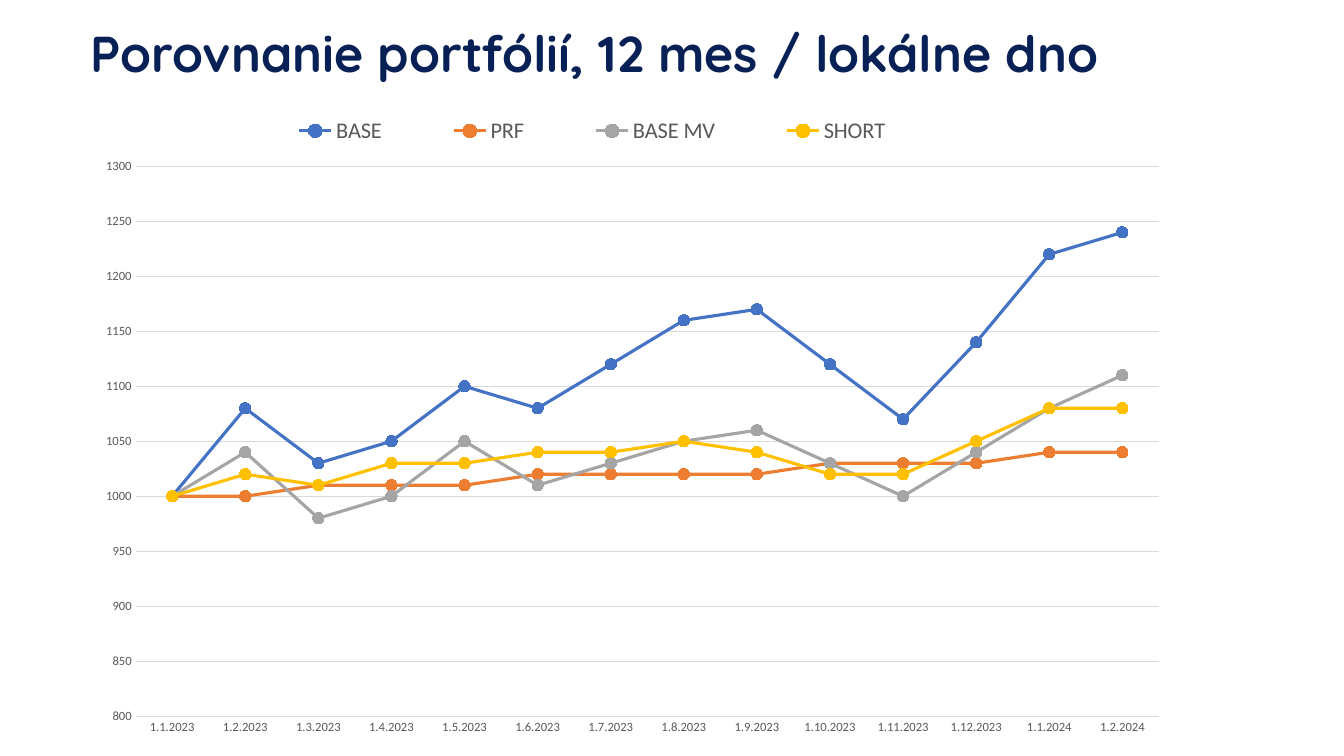
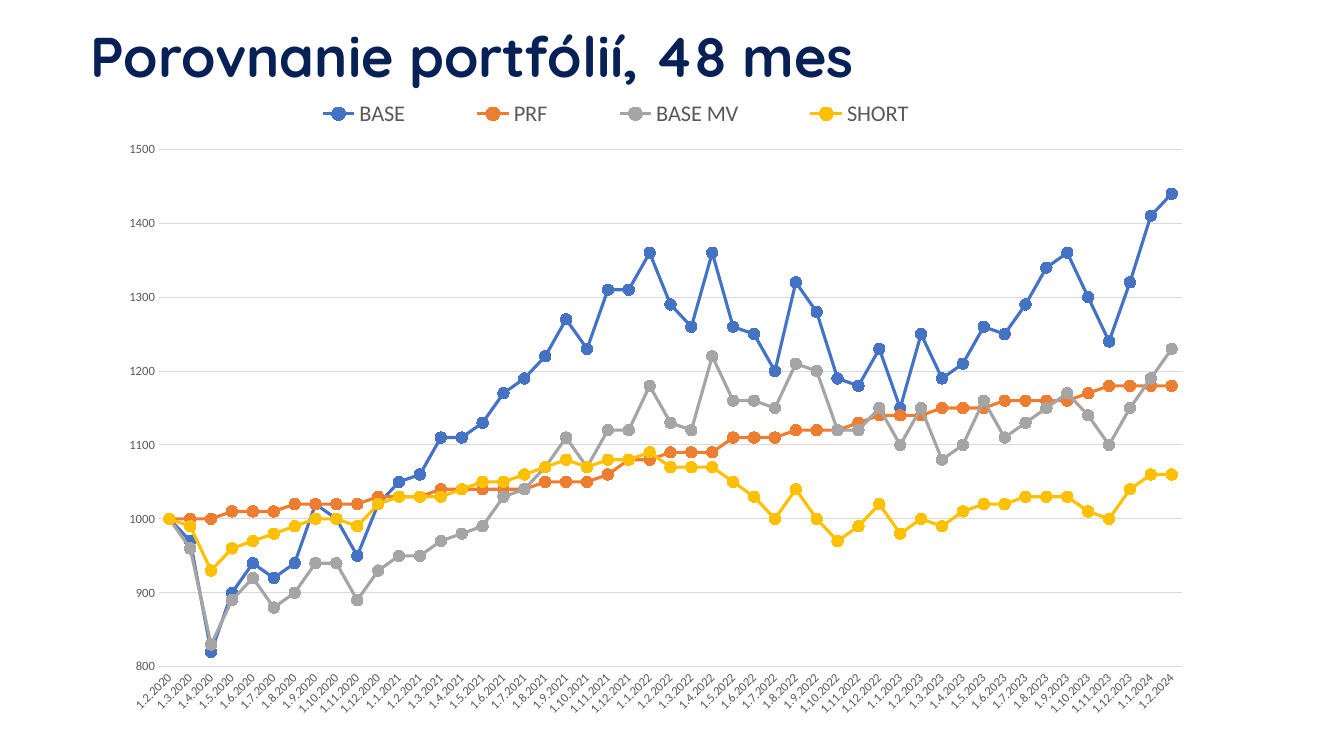
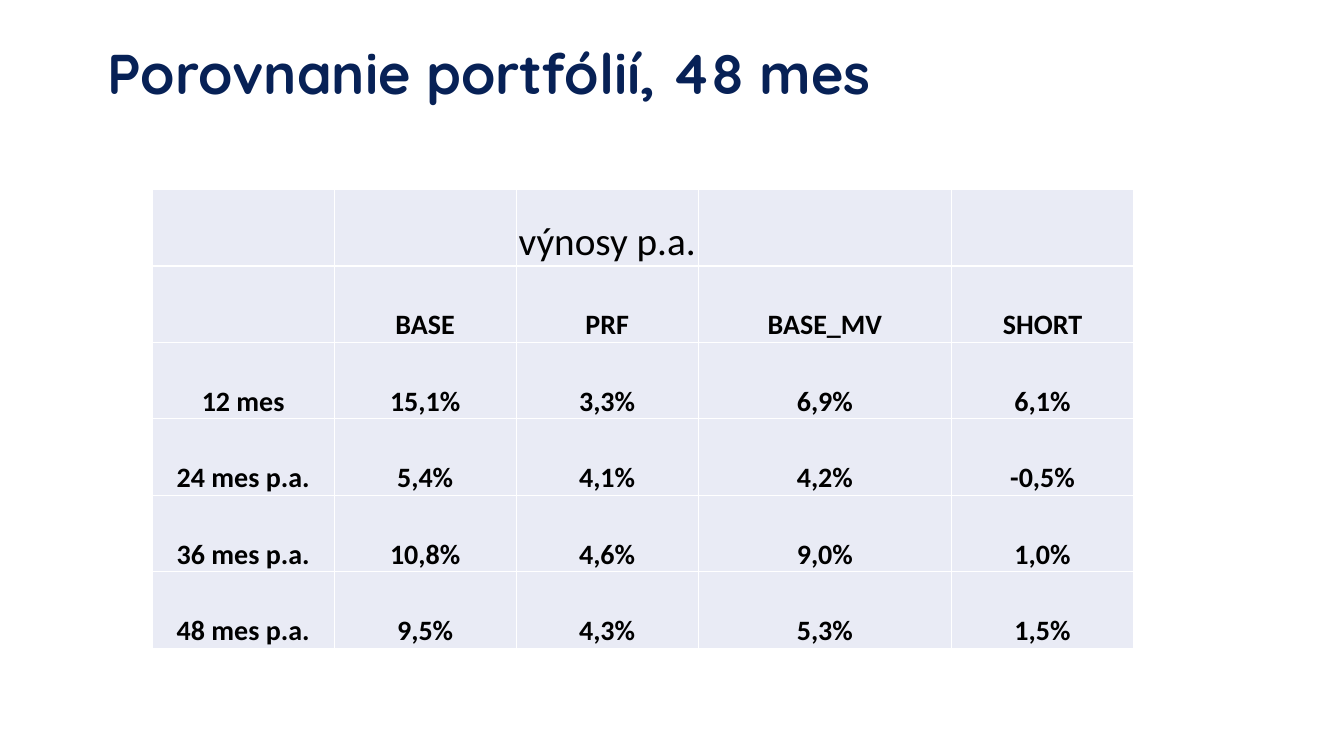
import dataclasses
import typing

import pptx
import pptx.chart.data
import pptx.dml.color
import pptx.enum.chart
import pptx.enum.text
import pptx.oxml
import pptx.oxml.ns
import pptx.util

Pt = pptx.util.Pt
NAVY, BLACK, GREY, RULE, PALE = "072156", "000000", "595959", "D9D9D9", "E9EBF5"
SERIES_COLOURS = {"BASE": "4472C4", "PRF": "ED7D31", "BASE MV": "A5A5A5", "SHORT": "FFC000"}
CELL_FORMAT = {
    "vertical_anchor": pptx.enum.text.MSO_ANCHOR.BOTTOM,
    "margin_bottom": Pt(0),
    **{f"margin_{side}": Pt(0.7) for side in ("left", "right", "top")},
}
NARROW, WIDE, ROW_HEIGHT = 130, 181, 54.6
TITLE_48 = "Porovnanie portfólií, 48 mes"


class Frame(typing.NamedTuple):
    x: float
    y: float
    w: float
    h: float


@dataclasses.dataclass(frozen=True)
class Comparison:
    title: str
    title_size: float
    left: float
    top: float
    plot_height: float
    slanted: bool
    tens: dict[str, list[int]]


def climb(months_per_level: list[int]) -> list[int]:
    return [100 + rise for rise, months in enumerate(months_per_level) for _ in range(months)]


LEGEND = Frame(0.14, 0.01, 0.65, 0.07)
COMPARISONS = [
    Comparison(
        "Porovnanie portfólií, 12 mes / lokálne dno", 36, 57.6, 72.7, 0.85, False,
        {
            "BASE": [100, 108, 103, 105, 110, 108, 112, 116, 117, 112, 107, 114, 122, 124],
            "PRF": climb([2, 3, 4, 3, 2]),
            "BASE MV": [100, 104, 98, 100, 105, 101, 103, 105, 106, 103, 100, 104, 108, 111],
            "SHORT": [100, 102, 101, 103, 103, 104, 104, 105, 104, 102, 102, 105, 108, 108],
        },
    ),
    Comparison(
        TITLE_48, 40, 74.2, 60.5, 0.8, True,
        {
            "BASE": [100, 97, 82, 90, 94, 92, 94, 102, 100, 95, 102, 105, 106, 111, 111, 113,
                     117, 119, 122, 127, 123, 131, 131, 136, 129, 126, 136, 126, 125, 120, 132,
                     128, 119, 118, 123, 115, 125, 119, 121, 126, 125, 129, 134, 136, 130, 124,
                     132, 141, 144],
            "PRF": climb([3, 3, 4, 3, 5, 3, 1, 0, 2, 3, 0, 3, 3, 1, 3, 3, 4, 1, 4]),
            "BASE MV": [100, 96, 83, 89, 92, 88, 90, 94, 94, 89, 93, 95, 95, 97, 98, 99, 103,
                        104, 107, 111, 107, 112, 112, 118, 113, 112, 122, 116, 116, 115, 121,
                        120, 112, 112, 115, 110, 115, 108, 110, 116, 111, 113, 115, 117, 114,
                        110, 115, 119, 123],
            "SHORT": [100, 99, 93, 96, 97, 98, 99, 100, 100, 99, 102, 103, 103, 103, 104, 105,
                      105, 106, 107, 108, 107, 108, 108, 109, 107, 107, 107, 105, 103, 100, 104,
                      100, 97, 99, 102, 98, 100, 99, 101, 102, 102, 103, 103, 103, 101, 100,
                      104, 106, 106],
        },
    ),
]

RETURNS = [
    ["", "", "výnosy p.a.", "", ""],
    ["", "BASE", "PRF", "BASE_MV", "SHORT"],
    ["12 mes", "15,1%", "3,3%", "6,9%", "6,1%"],
    ["24 mes p.a.", "5,4%", "4,1%", "4,2%", "-0,5%"],
    ["36 mes p.a.", "10,8%", "4,6%", "9,0%", "1,0%"],
    ["48 mes p.a.", "9,5%", "4,3%", "5,3%", "1,5%"],
]


def rgb(colour: str) -> pptx.dml.color.RGBColor:
    return pptx.dml.color.RGBColor.from_string(colour)


def apply(target: typing.Any, values: dict[str, typing.Any]) -> None:
    for name, value in values.items():
        setattr(target, name, value)


def style_font(font: typing.Any, size: float, colour: str, family: str = "Calibri",
               bold: bool = False) -> None:
    apply(font, {"size": Pt(size), "name": family, "bold": bold})
    font.color.rgb = rgb(colour)


def paint(part: typing.Any, colour: str) -> None:
    part.solid()
    part.fore_color.rgb = rgb(colour)


def style_line(line: typing.Any, colour: str, width: float = 0.75) -> None:
    paint(line.fill, colour)
    line.width = Pt(width)


def manual_layout(frame: Frame, target: str = "") -> typing.Any:
    modes = "".join(f'<c:{axis}Mode val="edge"/>' for axis in "xy")
    sizes = "".join(f'<c:{name} val="{value}"/>' for name, value in frame._asdict().items())
    return pptx.oxml.parse_xml(
        f'<c:layout {pptx.oxml.ns.nsdecls("c")}><c:manualLayout>'
        f"{target}{modes}{sizes}</c:manualLayout></c:layout>"
    )


def months_to_february_2024(count: int) -> list[str]:
    end = 2024 * 12 + 2
    return [f"1.{number % 12 + 1}.{number // 12}" for number in range(end - count, end)]


def add_title(slide: typing.Any, text: str, size: float, left: float = 57.6,
              top: float = 17.3) -> None:
    heading = slide.shapes.add_textbox(Pt(left), Pt(top), Pt(828), Pt(79.2)).text_frame
    heading.word_wrap = True
    line = heading.paragraphs[0]
    line.text = text
    line.line_spacing = 0.9
    style_font(line.runs[0].font, size, NAVY, "Quicksand", True)


def style_axes(chart: typing.Any, slanted: bool) -> None:
    months, values = chart.category_axis, chart.value_axis
    for axis in (months, values):
        axis.major_tick_mark = axis.minor_tick_mark = pptx.enum.chart.XL_TICK_MARK.NONE
        style_font(axis.tick_labels.font, 9, GREY)
    style_line(months.format.line, RULE)
    months.has_major_gridlines = False
    apply(values, {"minimum_scale": 800, "has_major_gridlines": True})
    values.format.line.fill.background()
    style_line(values.major_gridlines.format.line, RULE)
    if slanted:
        axis_xml = months._element
        axis_xml.find(".//" + pptx.oxml.ns.qn("a:bodyPr")).set("rot", "-2700000")
        skip = pptx.oxml.parse_xml(f'<c:tickLblSkip {pptx.oxml.ns.nsdecls("c")} val="1"/>')
        axis_xml.find(pptx.oxml.ns.qn("c:noMultiLvlLbl")).addprevious(skip)


def place_parts(chart: typing.Any, plot_height: float) -> None:
    area = chart._chartSpace.find(".//" + pptx.oxml.ns.qn("c:plotArea"))
    legend = chart.legend._element
    for part in (area, legend):
        for layout in part.findall(pptx.oxml.ns.qn("c:layout")):
            part.remove(layout)
    plot = Frame(0.05, 0.1, 0.93, plot_height)
    area.insert(0, manual_layout(plot, '<c:layoutTarget val="inner"/>'))
    legend.find(pptx.oxml.ns.qn("c:legendPos")).addnext(manual_layout(LEGEND))


def add_comparison(slide: typing.Any, comparison: Comparison) -> None:
    add_title(slide, comparison.title, comparison.title_size)
    data = pptx.chart.data.CategoryChartData(number_format="General")
    data.categories = months_to_february_2024(len(comparison.tens["BASE"]))
    for portfolio, tens in comparison.tens.items():
        data.add_series(portfolio, [value * 10 for value in tens])
    chart = slide.shapes.add_chart(
        pptx.enum.chart.XL_CHART_TYPE.LINE_MARKERS, Pt(comparison.left), Pt(comparison.top),
        Pt(786), Pt(462), data,
    ).chart
    apply(chart, {"has_title": False, "has_legend": True})
    style_font(chart.font, 10, BLACK)
    apply(chart.legend, {"position": pptx.enum.chart.XL_LEGEND_POSITION.TOP,
                         "include_in_layout": False})
    style_font(chart.legend.font, 16, GREY)
    chart.plots[0].vary_by_categories = False
    for portfolio in chart.plots[0].series:
        colour = SERIES_COLOURS[portfolio.name]
        portfolio.smooth = False
        style_line(portfolio.format.line, colour, 2.25)
        marker = portfolio.marker
        apply(marker, {"style": pptx.enum.chart.XL_MARKER_STYLE.CIRCLE, "size": 8})
        paint(marker.format.fill, colour)
        style_line(marker.format.line, colour)
    style_axes(chart, comparison.slanted)
    place_parts(chart, comparison.plot_height)


def add_returns(slide: typing.Any) -> None:
    add_title(slide, TITLE_48, 40, 69.8, 29.5)
    widths = [WIDE if name == "BASE_MV" else NARROW for name in RETURNS[1]]
    table = slide.shapes.add_table(
        len(RETURNS), len(widths), Pt(108.7), Pt(135.4),
        Pt(sum(widths)), Pt(ROW_HEIGHT * len(RETURNS)),
    ).table
    apply(table, {"first_row": False, "horz_banding": False})
    for column, width in zip(table.columns, widths):
        column.width = Pt(width)
    for row, texts in zip(table.rows, RETURNS):
        row.height = Pt(ROW_HEIGHT)
        caption = texts is RETURNS[0]
        for cell, text in zip(row.cells, texts):
            paint(cell.fill, PALE)
            apply(cell, CELL_FORMAT)
            if text:
                entry = cell.text_frame.paragraphs[0]
                entry.text = text
                entry.alignment = pptx.enum.text.PP_ALIGN.CENTER
                style_font(entry.runs[0].font, 28 if caption else 20, BLACK, bold=not caption)


def main() -> None:
    deck = pptx.Presentation()
    apply(deck, {"slide_width": Pt(960), "slide_height": Pt(540)})
    blank = deck.slide_layouts[6]
    for comparison in COMPARISONS:
        add_comparison(deck.slides.add_slide(blank), comparison)
    add_returns(deck.slides.add_slide(blank))
    deck.save("out.pptx")


if __name__ == "__main__":
    main()
